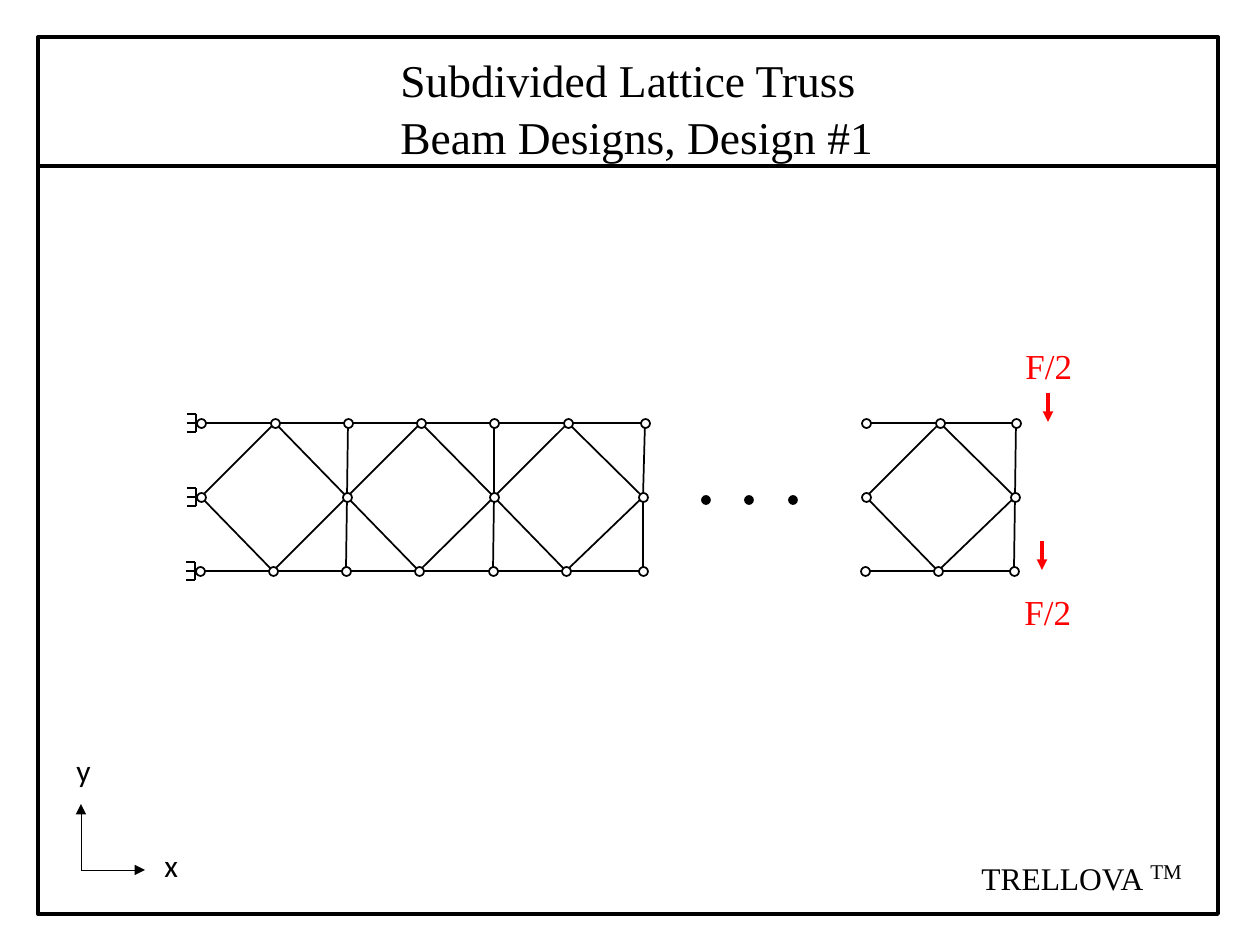
from lxml import etree
from pptx import Presentation
from pptx.dml.color import RGBColor
from pptx.enum.shapes import MSO_CONNECTOR, MSO_SHAPE
from pptx.oxml.ns import qn
from pptx.util import Pt

PX = 914400 / 126
BLACK = RGBColor(0x00, 0x00, 0x00)
WHITE = RGBColor(0xFF, 0xFF, 0xFF)
RED = RGBColor(0xFF, 0x00, 0x00)
LINE = MSO_CONNECTOR.STRAIGHT
OVAL = MSO_SHAPE.OVAL
RECT = MSO_SHAPE.RECTANGLE
SERIF = "Times New Roman"
SANS = "Calibri"

ROWS = (423, 497, 571)
# Joint x positions along the top, middle and bottom rows of each truss part
LEFT = (
    (201, 275, 348, 421, 494, 568, 645),
    (201, 347, 494, 643),
    (200, 273, 346, 419, 493, 566, 643),
)
RIGHT = ((866, 940, 1016), (866, 1015), (865, 938, 1014))


def emu(*sizes):
    return [round(size * PX) for size in sizes]


def add_line(slide, start, end, width=1, color=BLACK, arrow=False):
    line = slide.shapes.add_connector(LINE, *emu(*start, *end))
    line.line.width = Pt(width)
    line.line.color.rgb = color
    props = line._element.spPr
    if arrow:
        etree.SubElement(line.line._get_or_add_ln(), qn("a:tailEnd"), type="triangle")
    etree.SubElement(props, qn("a:effectLst"))


def add_shape(slide, kind, box, fill=None, width=1):
    shape = slide.shapes.add_shape(kind, *emu(*box))
    shape.shadow.inherit = False
    if fill is None:
        shape.fill.background()
    else:
        shape.fill.solid()
        shape.fill.fore_color.rgb = fill
    shape.line.color.rgb = BLACK
    shape.line.width = Pt(width)


def add_text(slide, box, lines, size, font=SERIF, color=BLACK, pitch=None):
    frame = slide.shapes.add_textbox(*emu(*box)).text_frame
    frame.word_wrap = True
    frame.text = "\n".join(lines)
    for para in frame.paragraphs:
        para.font.name = font
        para.font.size = Pt(size)
        para.font.color.rgb = color
        para.line_spacing = pitch


def add_truss(slide, part):
    """Draw chords, diamond braces and posts, then the joints over them."""
    top, mid, low = [[(x, y) for x in row] for row, y in zip(part, ROWS)]
    for chord in (top, low):
        for start, end in zip(chord, chord[1:]):
            add_line(slide, start, end)
        for bay, peak in enumerate(chord[1::2]):
            add_line(slide, mid[bay], peak)
            add_line(slide, peak, mid[bay + 1])
        for joint, end in zip(mid[1:], chord[2::2]):
            add_line(slide, joint, end)
    for x, y in top + mid + low:
        add_shape(slide, OVAL, (x - 4, y - 4, 9, 9), WHITE)


def add_mount(slide, x, y):
    """Draw the fixed support left of a joint: a post with three teeth."""
    post = x - 5
    add_line(slide, (post, y - 9), (post, y + 9))
    for shift in (-9, 0, 9):
        add_line(slide, (post - 9, y + shift), (post, y + shift))


def add_axes(slide):
    origin = (81, 870)
    add_line(slide, origin, (145, 870), 0.5, arrow=True)
    add_line(slide, origin, (81, 804), 0.5, arrow=True)
    add_text(slide, (152, 840, 39, 50), ["x"], 18, SANS)
    add_text(slide, (64, 745, 39, 50), ["y"], 18, SANS)


def add_load(slide, x, y, box):
    add_line(slide, (x, y), (x, y + 29), 2, RED, arrow=True)
    add_text(slide, box, ["F/2"], 20, color=RED)


def main():
    deck = Presentation()
    deck.slide_width, deck.slide_height = emu(1260, 945)
    slide = deck.slides.add_slide(deck.slide_layouts[6])

    add_shape(slide, RECT, (38, 37, 1180, 877), width=2.25)
    add_line(slide, (39, 166), (1219, 166), 2.25)
    title = ["Subdivided Lattice Truss", "Beam Designs, Design #1"]
    add_text(slide, (388, 43, 514, 123), title, 26, pitch=1.05)

    for part in (LEFT, RIGHT):
        add_truss(slide, part)
    for row, y in zip(LEFT, ROWS):
        add_mount(slide, row[0], y)
    for x in (702, 745, 789):
        add_shape(slide, OVAL, (x, 496, 8, 8), BLACK)

    add_load(slide, 1048, 393, (1013, 338, 88, 55))
    add_load(slide, 1042, 541, (1012, 584, 80, 55))
    add_axes(slide)
    add_text(slide, (969, 853, 192, 50), ["TRELLOVA"], 18)
    add_text(slide, (1138, 852, 64, 38), ["TM"], 12)
    deck.save("out.pptx")


if __name__ == "__main__":
    main()
